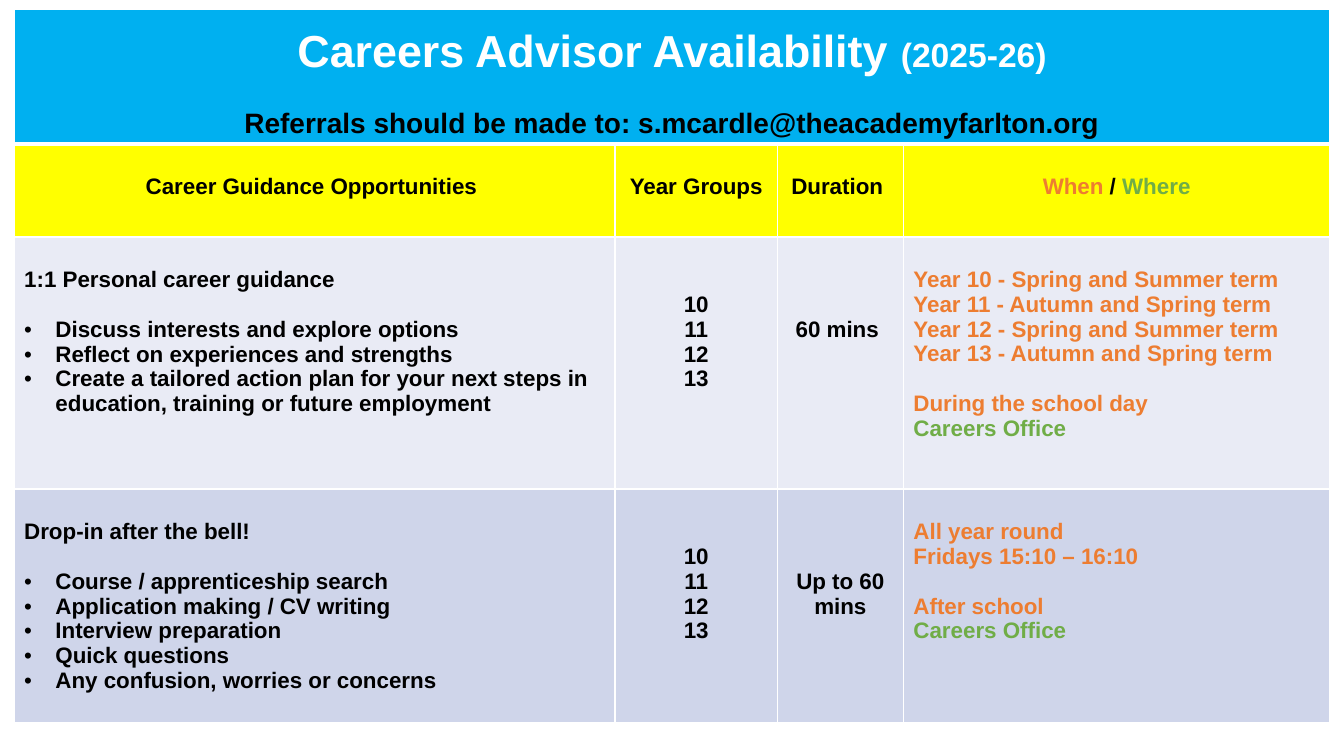
"""Build a one-slide timetable of careers advisor availability."""
from lxml import etree
from pptx import Presentation
from pptx import util as u
from pptx.dml.color import RGBColor
from pptx.enum import text
from pptx.oxml import ns

WHITE = RGBColor(0xFF, 0xFF, 0xFF)
BLACK = RGBColor(0, 0, 0)
BLUE = RGBColor(0x00, 0xB0, 0xF0)
YELLOW = RGBColor(0xFF, 0xFF, 0x00)
PALE = RGBColor(0xE9, 0xEB, 0xF5)
LAVENDER = RGBColor(0xCF, 0xD5, 0xEA)
ORANGE = RGBColor(0xED, 0x7D, 0x31)
GREEN = RGBColor(0x70, 0xAD, 0x47)

TITLE = [("Careers Advisor Availability ", WHITE, 32), ("(2025-26)", WHITE, 24)]
REFERRALS = [("Referrals should be made to: s.mcardle@theacademyfarlton.org", BLACK, 20)]
HEADINGS = [
    [("Career Guidance Opportunities ", BLACK)],
    [("Year Groups", BLACK)],
    [("Duration ", BLACK)],
    [("When", ORANGE), (" /", BLACK), (" Where", GREEN)],
]
YEAR_GROUPS = ["10", "11", "12", "13"]
PLACE = "Careers Office"
SERVICES = [
    {
        "name": "1:1 Personal career guidance",
        "activities": [
            "Discuss interests and explore options",
            "Reflect on experiences and strengths",
            "Create a tailored action plan for your next steps in education, "
            "training or future employment",
        ],
        "duration": "60 mins ",
        "dates": [
            "Year 10 - Spring and Summer term",
            "Year 11 - Autumn and Spring term",
            "Year 12 - Spring and Summer term",
            "Year 13 - Autumn and Spring term",
        ],
        "time": "During the school day",
        "fill": PALE,
    },
    {
        "name": "Drop-in after the bell!",
        "activities": [
            "Course / apprenticeship search",
            "Application making / CV writing",
            "Interview preparation",
            "Quick questions",
            "Any confusion, worries or concerns",
        ],
        "duration": "Up to 60 mins",
        "dates": ["All year round", "Fridays 15:10 – 16:10"],
        "time": "After school",
        "fill": LAVENDER,
    },
]

COLUMN_WIDTHS = [5.96, 1.61, 1.25, 4.23]
ROW_HEIGHTS = [1.34, 0.92, 2.5, 2.32]
BODY_SIZE = 16
LINE_RATIO = 1.117
CELL_MARGIN = 0.05
INDENT = 0.31


def line_height(size):
    return u.Pt(round(size * LINE_RATIO, 1))


def add_bullet(paragraph):
    properties = paragraph._p.get_or_add_pPr()
    properties.set("marL", str(u.Inches(INDENT)))
    properties.set("indent", str(-u.Inches(INDENT)))
    etree.SubElement(properties, ns.qn("a:buFont")).set("typeface", "Arial")
    etree.SubElement(properties, ns.qn("a:buChar")).set("char", "•")


def set_borders(cell, top, bottom):
    properties = cell._tc.get_or_add_tcPr()
    widths = {"a:lnL": 1, "a:lnR": 1, "a:lnT": top, "a:lnB": bottom}
    for position, (tag, width) in enumerate(widths.items()):
        line = etree.Element(ns.qn(tag), w=str(u.Pt(width)))
        fill = etree.SubElement(line, ns.qn("a:solidFill"))
        etree.SubElement(fill, ns.qn("a:srgbClr")).set("val", str(WHITE))
        properties.insert(position, line)


def write_cell(cell, blocks, lead, gap_size=BODY_SIZE, centred=True, bullet_block=None):
    cell.margin_top = u.Inches(CELL_MARGIN) + lead
    frame = cell.text_frame
    paragraph = None
    for block_index, block in enumerate(blocks):
        for line_index, runs in enumerate(block):
            paragraph = frame.add_paragraph() if paragraph else frame.paragraphs[0]
            paragraph.alignment = text.PP_ALIGN.CENTER if centred else text.PP_ALIGN.LEFT
            paragraph.font.name = "Arial"
            paragraph.font.bold = True
            if block_index and not line_index:
                paragraph.space_before = line_height(gap_size)
            if block_index == bullet_block:
                add_bullet(paragraph)
            for words, colour, *size in runs:
                run = paragraph.add_run()
                run.text = words
                run.font.color.rgb = colour
                run.font.size = u.Pt(size[0] if size else BODY_SIZE)


def lines(words, colour=BLACK):
    return [[(line, colour)] for line in words]


def build_table(slide):
    frame = slide.shapes.add_table(
        len(ROW_HEIGHTS), len(COLUMN_WIDTHS), u.Inches(0.14), u.Inches(0.09),
        u.Inches(sum(COLUMN_WIDTHS)), u.Inches(sum(ROW_HEIGHTS)))
    table = frame.table
    for column, width in zip(table.columns, COLUMN_WIDTHS):
        column.width = u.Inches(width)
    for row, height in zip(table.rows, ROW_HEIGHTS):
        row.height = u.Inches(height)

    fills = [BLUE, YELLOW] + [service["fill"] for service in SERVICES]
    for row_index, (row, colour) in enumerate(zip(table.rows, fills)):
        for cell in row.cells:
            cell.fill.solid()
            cell.fill.fore_color.rgb = colour
            set_borders(cell, 3 if row_index == 1 else 1, 3 if row_index == 0 else 1)

    banner = table.cell(0, 0)
    banner.merge(table.cell(0, len(COLUMN_WIDTHS) - 1))
    write_cell(banner, [[TITLE], [REFERRALS]], line_height(8), gap_size=20)

    blank = line_height(BODY_SIZE)
    for column, runs in enumerate(HEADINGS):
        write_cell(table.cell(1, column), [[runs]], blank)
    for row, service in enumerate(SERVICES, start=2):
        write_cell(table.cell(row, 0), [lines([service["name"]]), lines(service["activities"])],
                   blank, centred=False, bullet_block=1)
        write_cell(table.cell(row, 1), [lines(YEAR_GROUPS)], 2 * blank)
        write_cell(table.cell(row, 2), [lines([service["duration"]])], 3 * blank)
        venue = lines([service["time"]], ORANGE) + lines([PLACE], GREEN)
        write_cell(table.cell(row, 3), [lines(service["dates"], ORANGE), venue],
                   blank, centred=False)


def main():
    presentation = Presentation()
    presentation.slide_width = u.Inches(13.33)
    presentation.slide_height = u.Inches(7.5)
    slide = presentation.slides.add_slide(presentation.slide_layouts[6])
    build_table(slide)
    presentation.save("out.pptx")


if __name__ == "__main__":
    main()
